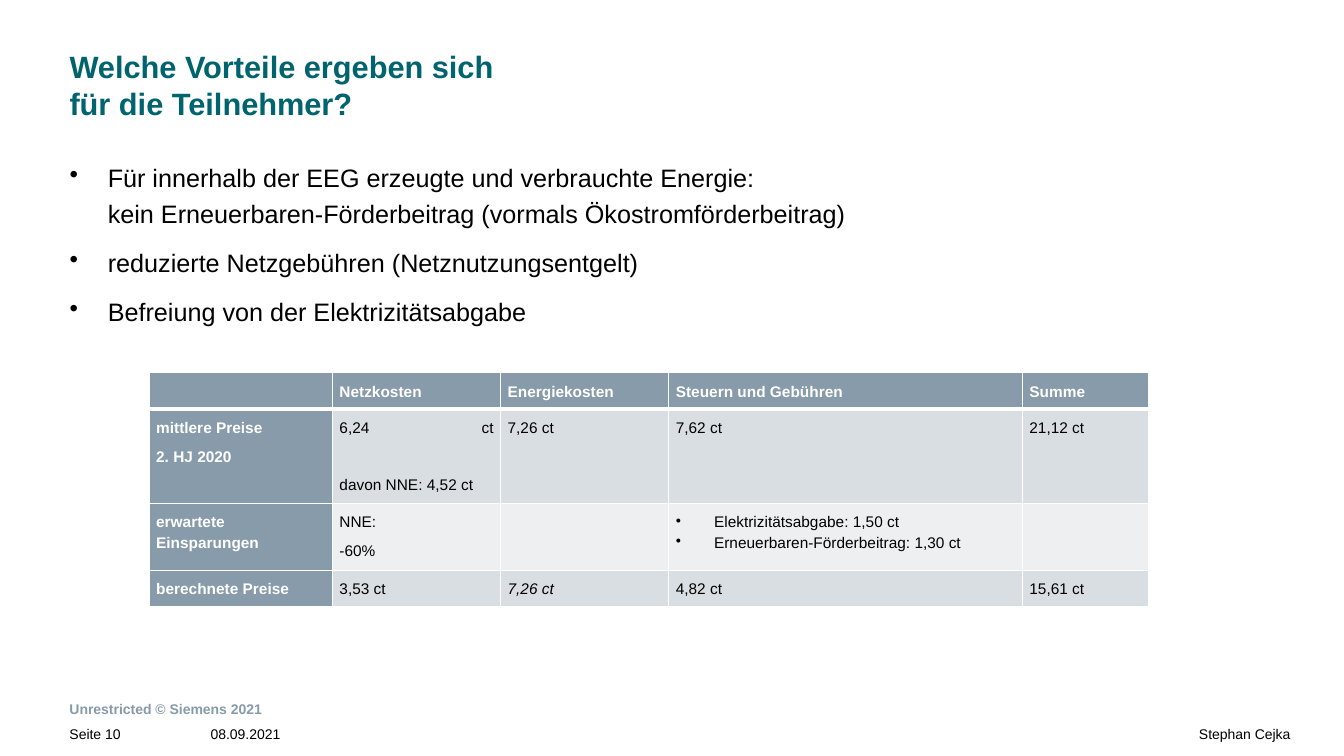
from pptx import Presentation
from pptx.dml.color import RGBColor
from pptx.enum import text
from pptx.oxml import ns, xmlchemy as x
from pptx.util import Pt

TEAL = RGBColor(0x00, 0x64, 0x6E)
SLATE = RGBColor(0x87, 0x9B, 0xAA)
BAND_DARK = RGBColor(0xD9, 0xDE, 0xE2)
BAND_LIGHT = RGBColor(0xED, 0xEF, 0xF1)
WHITE = RGBColor(0xFF, 0xFF, 0xFF)
BLACK = RGBColor(0x00, 0x00, 0x00)
LEFT, JUSTIFY, RIGHT = text.PP_ALIGN.LEFT, text.PP_ALIGN.JUSTIFY, text.PP_ALIGN.RIGHT
TOP, MIDDLE = text.MSO_ANCHOR.TOP, text.MSO_ANCHOR.MIDDLE

WIDTH, HEIGHT, MARGIN, INDENT = 960.48, 540, 49.68, 27.36
TITLE = "Welche Vorteile ergeben sich \vfür die Teilnehmer?"
BENEFITS = [
    "Für innerhalb der EEG erzeugte und verbrauchte Energie: \v"
    "kein Erneuerbaren-Förderbeitrag (vormals Ökostromförderbeitrag)",
    "reduzierte Netzgebühren (Netznutzungsentgelt)",
    "Befreiung von der Elektrizitätsabgabe",
]
PRICES = [
    ["", "Netzkosten", "Energiekosten", "Steuern und Gebühren", "Summe"],
    ["mittlere Preise\n2. HJ 2020", "6,24 ct\v\vdavon NNE: 4,52 ct", "7,26 ct", "7,62 ct", "21,12 ct"],
    ["erwartete Einsparungen", "NNE:\n-60%", "",
     "Elektrizitätsabgabe: 1,50 ct\nErneuerbaren-Förderbeitrag: 1,30 ct", ""],
    ["berechnete Preise", "3,53 ct", "7,26 ct", "4,82 ct", "15,61 ct"],
]
COLUMN_WIDTHS = [131, 120.2, 120.2, 252.7, 90]
ROW_HEIGHTS = [24, 58.5, 45, 25]
BULLETED, ITALIC = (2, 3), (3, 2)
FOOTERS = [
    ("Unrestricted © Siemens 2021", (0, 485.3, WIDTH, 31), (MARGIN, 11.5, 252.7, 0), SLATE, True, LEFT, MIDDLE, 1),
    ("08.09.2021", (0, 517, 309.6, 23), (150.5, 0, 0, 9.4), BLACK, False, LEFT, TOP, 1.1),
    ("Seite 10", (0, 517, 139, 23), (MARGIN, 0, 0, 9.4), BLACK, False, LEFT, TOP, 1.1),
    ("Stephan Cejka", (298, 517, 662.4, 23), (0, 0, 38.2, 9.4), BLACK, False, RIGHT, TOP, 1.1),
]


def set_margins(target, insets):
    (target.margin_left, target.margin_top,
     target.margin_right, target.margin_bottom) = map(Pt, insets)


def add_bullet(p):
    pPr = p._p.get_or_add_pPr()
    pPr.set("marL", str(Pt(INDENT)))
    pPr.set("indent", str(-Pt(INDENT)))
    x.OxmlElement("a:buChar").set("char", "•")
    bullet = x.OxmlElement("a:buChar")
    bullet.set("char", "•")
    pPr.append(bullet)


def style(p, size, color, bold=False, italic=False, align=LEFT, spacing=1):
    p.alignment, p.line_spacing = align, spacing
    for r in p.runs:
        r.font.name, r.font.size = "Arial", Pt(size)
        r.font.bold, r.font.italic = bold, italic
        r.font.color.rgb = color


def add_border(cell, side, width):
    line = x.OxmlElement(f"a:ln{side}")
    line.set("w", str(Pt(width)))
    fill = x.OxmlElement("a:solidFill")
    color = x.OxmlElement("a:srgbClr")
    color.set("val", str(WHITE))
    fill.append(color)
    line.append(fill)
    cell._tc.get_or_add_tcPr().append(line)


def add_text(s, box, insets, content, anchor=TOP):
    tf = s.shapes.add_textbox(*map(Pt, box)).text_frame
    tf.word_wrap, tf.vertical_anchor = True, anchor
    set_margins(tf, insets)
    tf.text = content
    return tf


def add_title(s):
    title = s.shapes.title
    title.left, title.top, title.width, title.height = map(Pt, (0, 0, WIDTH, 111.6))
    tf = title.text_frame
    tf.auto_size, tf.vertical_anchor = text.MSO_AUTO_SIZE.NONE, TOP
    set_margins(tf, (MARGIN, 33.8, 266.4, 16.6))
    tf.text = TITLE
    style(tf.paragraphs[0], 22, TEAL, bold=True)


def add_benefits(s):
    tf = add_text(s, (MARGIN, 111.6, 776.9, 374.4), (0, 0, 0, 0), "\n".join(BENEFITS))
    for i, p in enumerate(tf.paragraphs):
        add_bullet(p)
        style(p, 18, BLACK, align=JUSTIFY if i else LEFT, spacing=1.2)
        if i:
            p.space_before = Pt(9)


def fill_cell(cell, row, col):
    header = row == 0 or col == 0
    for side in "LRTB":
        heavy = (row, side) in ((0, "B"), (1, "T"))
        add_border(cell, side, 3 if heavy else 1)
    cell.fill.solid()
    cell.fill.fore_color.rgb = SLATE if header else BAND_DARK if row % 2 else BAND_LIGHT
    set_margins(cell, (5, 5, 5, 5))
    cell.text_frame.text = PRICES[row][col]
    for p in cell.text_frame.paragraphs:
        bulleted = (row, col) == BULLETED
        if bulleted:
            add_bullet(p)
        style(p, 11, WHITE if header else BLACK, header, (row, col) == ITALIC, JUSTIFY, 1.2)
        p.space_after = Pt(0 if bulleted else 6)
        end = x.OxmlElement("a:endParaRPr")
        end.set("sz", "1100")
        p._p.append(end)


def add_prices(s):
    frame = s.shapes.add_table(len(PRICES), len(COLUMN_WIDTHS), Pt(106.6), Pt(266.3),
                               Pt(sum(COLUMN_WIDTHS)), Pt(sum(ROW_HEIGHTS)))
    table = frame.table
    for column, width in zip(table.columns, COLUMN_WIDTHS):
        column.width = Pt(width)
    for row, height in enumerate(ROW_HEIGHTS):
        table.rows[row].height = Pt(height)
        for col in range(len(COLUMN_WIDTHS)):
            fill_cell(table.cell(row, col), row, col)


def main():
    prs = Presentation()
    prs.slide_width, prs.slide_height = Pt(WIDTH), Pt(HEIGHT)
    s = prs.slides.add_slide(prs.slide_layouts[5])
    add_title(s)
    add_benefits(s)
    add_prices(s)
    for content, box, insets, color, bold, align, anchor, spacing in FOOTERS:
        tf = add_text(s, box, insets, content, anchor)
        style(tf.paragraphs[0], 10, color, bold, align=align, spacing=spacing)
    prs.save("out.pptx")


if __name__ == "__main__":
    main()
